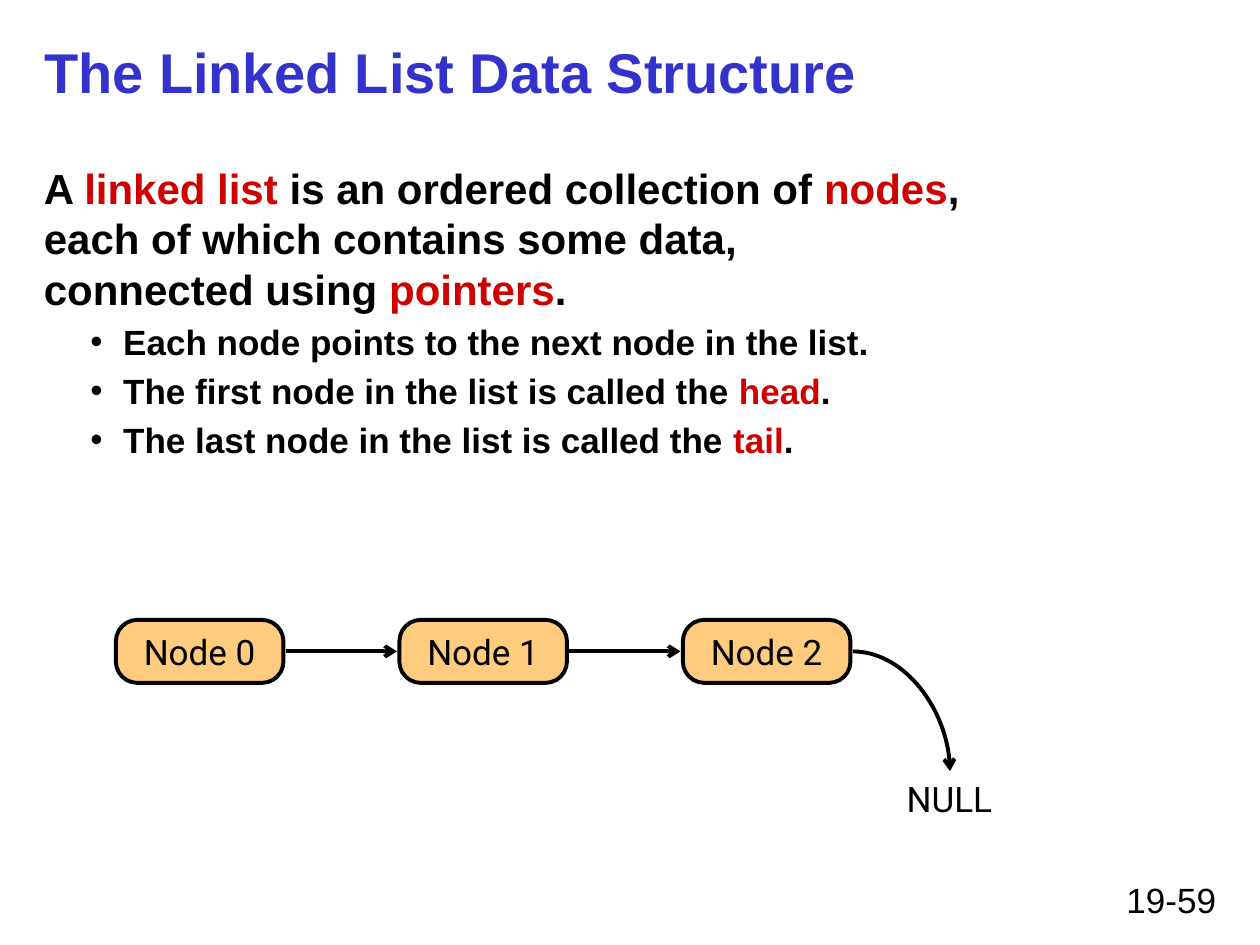
from lxml.etree import SubElement
from pptx import Presentation
from pptx.dml.color import RGBColor
from pptx.enum.shapes import MSO_CONNECTOR, MSO_SHAPE
from pptx.enum.text import MSO_ANCHOR, PP_ALIGN
from pptx.oxml.ns import qn
from pptx.util import Inches, Pt

COLORS = {"title": "3333CC", "text": "000000", "term": "CE0000", "node": "FF9900"}


def add_span(para, text, size, color="text", font="Arial", bold=False):
    span = para.add_run()
    span.text = text
    span.font.size = Pt(size)
    span.font.name = font
    span.font.bold = bold
    span.font.color.rgb = RGBColor.from_string(COLORS[color])


def add_arrow(kind, start_x, start_y, end_x, end_y):
    arrow = slide.shapes.add_connector(
        kind, Inches(start_x), Inches(start_y), Inches(end_x), Inches(end_y))
    arrow.line.color.rgb = RGBColor.from_string(COLORS["text"])
    arrow.line.width = Pt(2.25)
    SubElement(arrow.line._get_or_add_ln(), qn("a:tailEnd"), type="arrow")
    SubElement(arrow._element.spPr, qn("a:effectLst"))
    return arrow


deck = Presentation()
deck.slide_width, deck.slide_height = Inches(10), Inches(7.5)
slide = deck.slides.add_slide(deck.slide_layouts[5])

# Title
title = slide.shapes.title
title.left, title.top = Inches(0.25), Inches(0.19)
title.width, title.height = Inches(9.5), Inches(0.75)
title.text_frame.vertical_anchor = MSO_ANCHOR.MIDDLE
para = title.text_frame.paragraphs[0]
para.alignment = PP_ALIGN.LEFT
add_span(para, "The Linked List Data Structure", 32, "title", bold=True)

# Definition
body = slide.shapes.add_textbox(Inches(0.25), Inches(0.94), Inches(9.5), Inches(5.42))
frame = body.text_frame
frame.word_wrap = True
frame.margin_top = Inches(0.35)
definition = [
    [("A ", "text"), ("linked list", "term"),
     (" is an ordered collection of ", "text"), ("nodes", "term"), (",", "text")],
    [("each of which contains some data,", "text")],
    [("connected using ", "text"), ("pointers", "term"), (".", "text")],
]
para = frame.paragraphs[0]
for number, line in enumerate(definition):
    if number:
        para.add_line_break()
    for text, color in line:
        add_span(para, text, 24, color, bold=True)

# Bullets
bullets = [
    [("Each node points to the next node in the list.", "text")],
    [("The first node in the list is called the ", "text"), ("head", "term"), (".", "text")],
    [("The last node in the list is called the ", "text"), ("tail", "term"), (".", "text")],
]
for bullet in bullets:
    para = frame.add_paragraph()
    para.level = 1
    para.space_before = Pt(4)
    properties = para._p.get_or_add_pPr()
    properties.set("marL", str(Inches(0.63)))
    properties.set("indent", str(Inches(-0.26)))
    SubElement(properties, qn("a:buFont"), typeface="Arial")
    SubElement(properties, qn("a:buChar"), char="•")
    for text, color in bullet:
        add_span(para, text, 20, color, bold=True)

# Nodes, with an arrow from each to the next
node_left, node_top, node_width, node_height = 0.92, 4.92, 1.33, 0.5
node_step, arrow_gap, node_count = 2.25, 0.02, 3
middle = node_top + node_height / 2
for number in range(node_count):
    left = node_left + number * node_step
    node = slide.shapes.add_shape(
        MSO_SHAPE.ROUNDED_RECTANGLE, Inches(left), Inches(node_top),
        Inches(node_width), Inches(node_height))
    node.adjustments[0] = 0.34
    node.shadow.inherit = False
    node.fill.solid()
    node.fill.fore_color.rgb = RGBColor.from_string(COLORS["node"])
    fill_color = node._element.spPr.find(qn("a:solidFill")).find(qn("a:srgbClr"))
    SubElement(fill_color, qn("a:alpha"), val="50000")
    node.line.color.rgb = RGBColor.from_string(COLORS["text"])
    node.line.width = Pt(2.25)
    node.text_frame.word_wrap = False
    node.text_frame.vertical_anchor = MSO_ANCHOR.MIDDLE
    para = node.text_frame.paragraphs[0]
    para.alignment = PP_ALIGN.CENTER
    add_span(para, f"Node {number}", 20, font="Roboto")
    if number < node_count - 1:
        add_arrow(MSO_CONNECTOR.STRAIGHT, left + node_width + arrow_gap, middle,
                  left + node_step - arrow_gap, middle)

# Curved arrow from the tail to NULL
curve = add_arrow(MSO_CONNECTOR.CURVE, left + node_width + arrow_gap, middle, 7.54, 6.12)
curve._element.spPr.find(qn("a:prstGeom")).set("prst", "curvedConnector2")

# NULL label and page number
labels = [
    ("NULL", "Roboto", PP_ALIGN.CENTER, 7.08, 6.12, 0.91, 0.43),
    ("19-59", "Arial", PP_ALIGN.RIGHT, 7.17, 6.92, 2.58, 0.42),
]
for text, font, alignment, left, top, width, height in labels:
    box = slide.shapes.add_textbox(Inches(left), Inches(top), Inches(width), Inches(height))
    box.text_frame.word_wrap = True
    para = box.text_frame.paragraphs[0]
    para.alignment = alignment
    add_span(para, text, 20, font=font)

deck.save("out.pptx")
